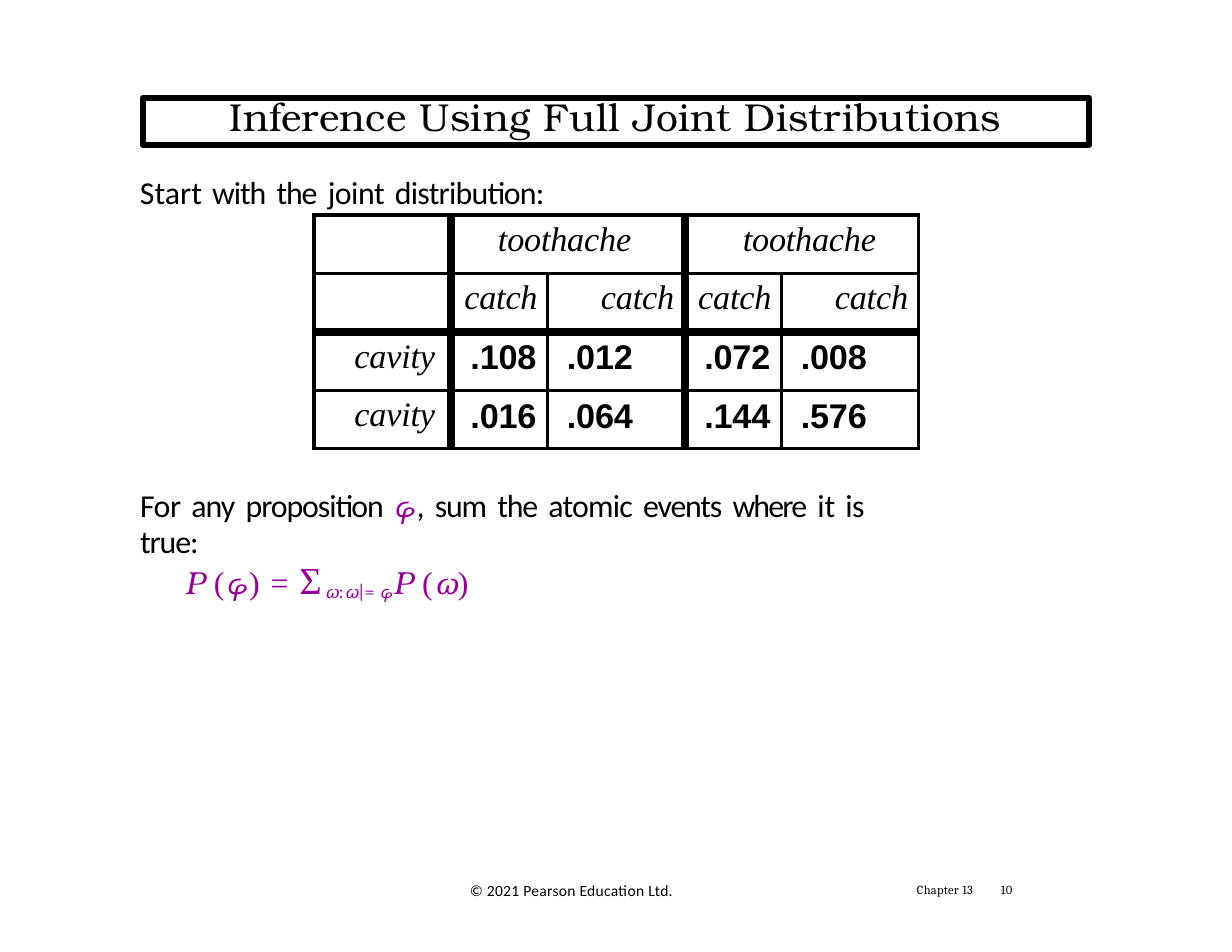
from lxml import etree
from pptx import Presentation
from pptx.dml.color import RGBColor
from pptx.enum.text import MSO_ANCHOR, MSO_AUTO_SIZE, PP_ALIGN
from pptx.oxml.ns import qn
from pptx.util import Emu, Pt

TOP = MSO_ANCHOR.TOP
GROW, FIXED = MSO_AUTO_SIZE.SHAPE_TO_FIT_TEXT, MSO_AUTO_SIZE.NONE
LEFT, MID, RIGHT = PP_ALIGN.LEFT, PP_ALIGN.CENTER, PP_ALIGN.RIGHT
BLACK = RGBColor(0, 0, 0)
PURPLE = RGBColor(0x99, 0, 0x99)
SANS, SERIF, BOOK = "Calibri", "Times New Roman", "TeX Gyre Bonum"
CAMB, BOLD = "Cambria", "Arial"
PX = 914400 / 112
SPACE = 1.9


def px(n):
    return Emu(round(n * PX))


def add_run(para, text, size, font, gap=0, color=BLACK, ital=False, bold=False, base=0):
    run = para.add_run()
    run.text = text
    run.font.size = Pt(size)
    run.font.name = font
    run.font.color.rgb = color
    run.font.italic = ital
    run.font.bold = bold
    props = run.font._element
    props.set("spc", str(round(gap * 100)))
    if base:
        props.set("baseline", str(base * 1000))


deck = Presentation()
deck.slide_width, deck.slide_height = px(1232), px(952)
slide = deck.slides.add_slide(deck.slide_layouts[5])

title = slide.shapes.title
title.left, title.top, title.width, title.height = px(143), px(98), px(946), px(47)
title.line.color.rgb = BLACK
title.line.width = Pt(4.08)
frame = title.text_frame
frame.margin_left = frame.margin_top = frame.margin_right = frame.margin_bottom = 0
frame.vertical_anchor = TOP
frame.word_wrap = True
frame.auto_size = FIXED
para = frame.paragraphs[0]
para.alignment = MID
para.line_spacing = Pt(26.4)
add_run(para, "Inference Using Full Joint Distributions", 25, BOOK, 0.27)

intro = [("Start ", 0), ("with ", -0.7), ("the ", -0.8), ("joint ", -0.3),
         ("distribution:", -0.5)]
rule = [("For ", -0.3), ("any ", -0.6), ("proposition ", -0.7), ("φ", -1.1),
        (", ", -1.1), ("sum ", -0.8), ("the ", -0.8), ("atomic ", -0.5),
        ("events ", -0.8), ("where ", -1.2), ("it ", -0.1), ("is ", -0.4),
        ("true:", -0.7)]
boxes = [
    ((459, 875, 420, 49), (11, 6), None, 10, SANS, [("© 2021 Pearson Education Ltd.", 0.2)]),
    ((915, 884, 60, 16), (2, 0), 8.6, 8, CAMB, [("Chapter 13", 0.2)]),
    ((997, 884, 24, 16), (4, 0), 8.6, 8, CAMB, [("10", 0.2)]),
    ((139, 171, 407, 41), (1, 2), None, 20.5, SANS, intro),
    ((136, 487, 788, 82), (4, 2), 22.7, 20.5, SANS, rule),
]
for place, (left, top), lead, size, font, words in boxes:
    box = slide.shapes.add_textbox(*map(px, place))
    frame = box.text_frame
    frame.word_wrap = True
    frame.auto_size = GROW
    frame.margin_left, frame.margin_top = px(left), px(top)
    frame.margin_right = frame.margin_bottom = 0
    para = frame.paragraphs[0]
    if lead:
        para.line_spacing = Pt(lead)
    for text, gap in words:
        if text == "φ":
            add_run(para, text, size, BOOK, gap, PURPLE, True)
            continue
        add_run(para, text.rstrip(), size, font, gap)
        if text.endswith(" "):
            add_run(para, " ", size, font, SPACE)

para = frame.add_paragraph()
para.line_spacing = Pt(27.5)
para._p.get_or_add_pPr().set("marL", str(px(45)))
maths = [
    ("P ", 20.5, BOOK, 0, 0), ("(", 20.5, SERIF, 1.3, 0), ("φ", 20.5, BOOK, -2.4, 0),
    (") ", 20.5, SERIF, 1, 0), ("= ", 20.5, SERIF, 0.9, 0), ("Σ", 24.5, SERIF, 2.2, 0),
    ("ω", 21, BOOK, -1.3, -14), (":", 21, CAMB, 0.7, -14), ("ω", 21, BOOK, -1.3, -14),
    ("|", 21, CAMB, -4.3, -14), ("=", 21, CAMB, 3.5, -14), ("φ", 21, BOOK, -1.4, -14),
    ("P ", 20.5, BOOK, 0, 0), ("(", 20.5, SERIF, 1.3, 0), ("ω", 20.5, BOOK, -1.4, 0),
    (")", 20.5, SERIF, 1.3, 0),
]
for text, size, font, gap, base in maths:
    add_run(para, text, size, font, gap, PURPLE, font == BOOK, base=base)

rows = [
    ["", "toothache", "", "toothache", ""],
    ["", "catch", "catch", "catch", "catch"],
    ["cavity", ".108", ".012", ".072", ".008"],
    ["cavity", ".016", ".064", ".144", ".576"],
]
wide = [137, 97, 137, 97, 137]
table = slide.shapes.add_table(4, 5, px(314), px(215), px(sum(wide)), px(234)).table
table.first_row = table.horz_banding = False
for col, size in zip(table.columns, wide):
    col.width = px(size)
for row in table.rows:
    row.height = px(58.5)
for c in (1, 3):
    table.cell(0, c).merge(table.cell(0, c + 1))

for r, row in enumerate(rows):
    for c, text in enumerate(row):
        cell = table.cell(r, c)
        if cell.is_spanned:
            continue
        num = text.startswith(".")
        cell.fill.background()
        cell.margin_left = cell.margin_bottom = 0
        cell.margin_right = px(0 if c else 16)
        cell.margin_top = px(7 if num else 6)
        if text:
            para = cell.text_frame.paragraphs[0]
            if r == 0:
                para.alignment, left = LEFT, 47 if c == 1 else 58
            elif c == 0:
                para.alignment, left = RIGHT, 0
            elif c % 2:
                para.alignment, left = MID, 8 if num else 3
            else:
                para.alignment, left = LEFT, 19 if num else 53
            para._p.get_or_add_pPr().set("marL", str(px(left)))
            add_run(para, text, 22, BOLD if num else SERIF, -0.1, BLACK, not num, num)
        end = c + (cell.span_width if cell.is_merge_origin else 1)
        thick = [("lnL", c in (1, 3)), ("lnR", end in (1, 3)),
                 ("lnT", r == 2), ("lnB", r == 1)]
        props = cell._tc.get_or_add_tcPr()
        for i, (tag, heavy) in enumerate(thick):
            line = etree.Element(qn("a:" + tag), w=str(Pt(6 if heavy else 2.25)))
            fill = etree.SubElement(line, qn("a:solidFill"))
            etree.SubElement(fill, qn("a:srgbClr"), val=str(BLACK))
            props.insert(i, line)

deck.save("out.pptx")
